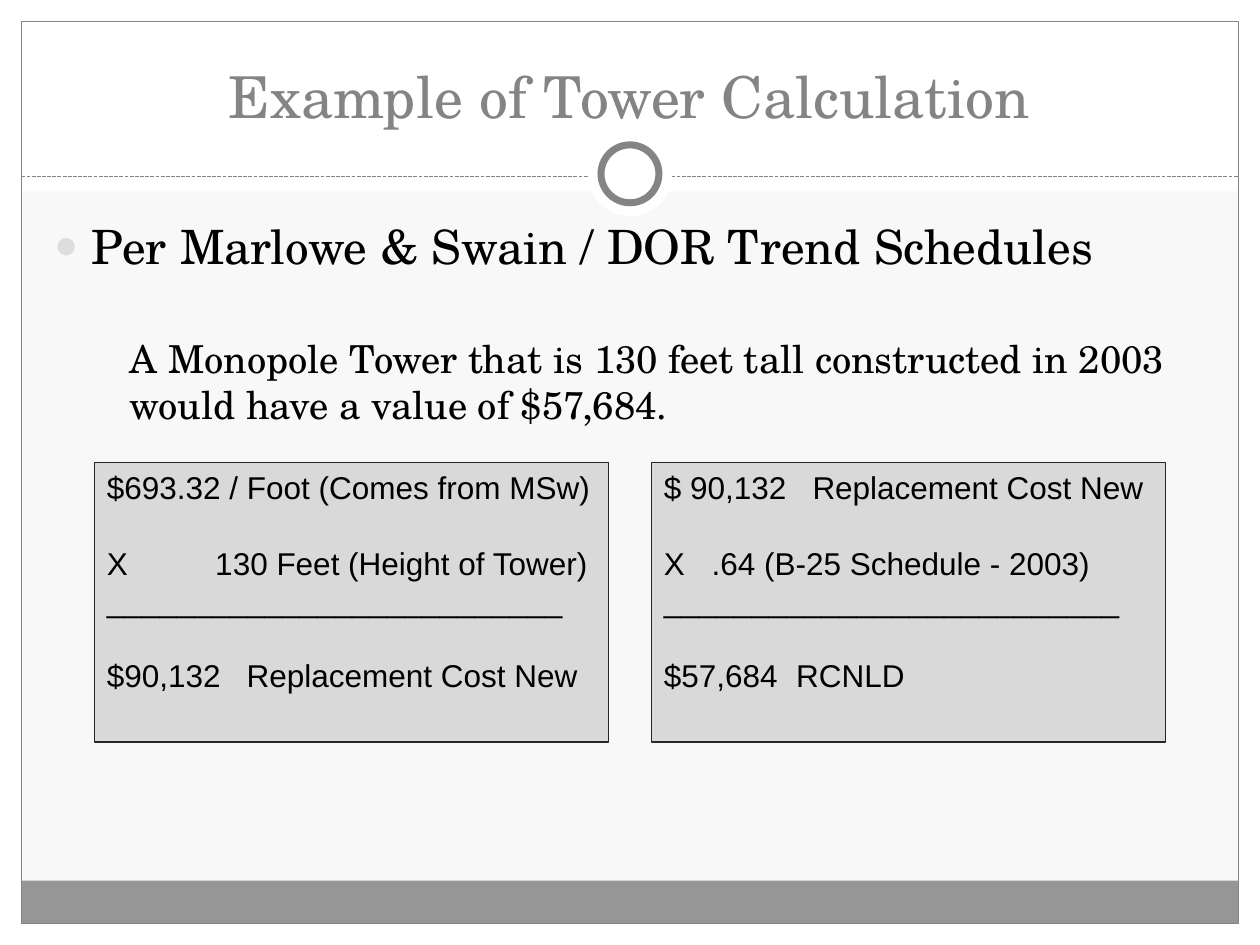
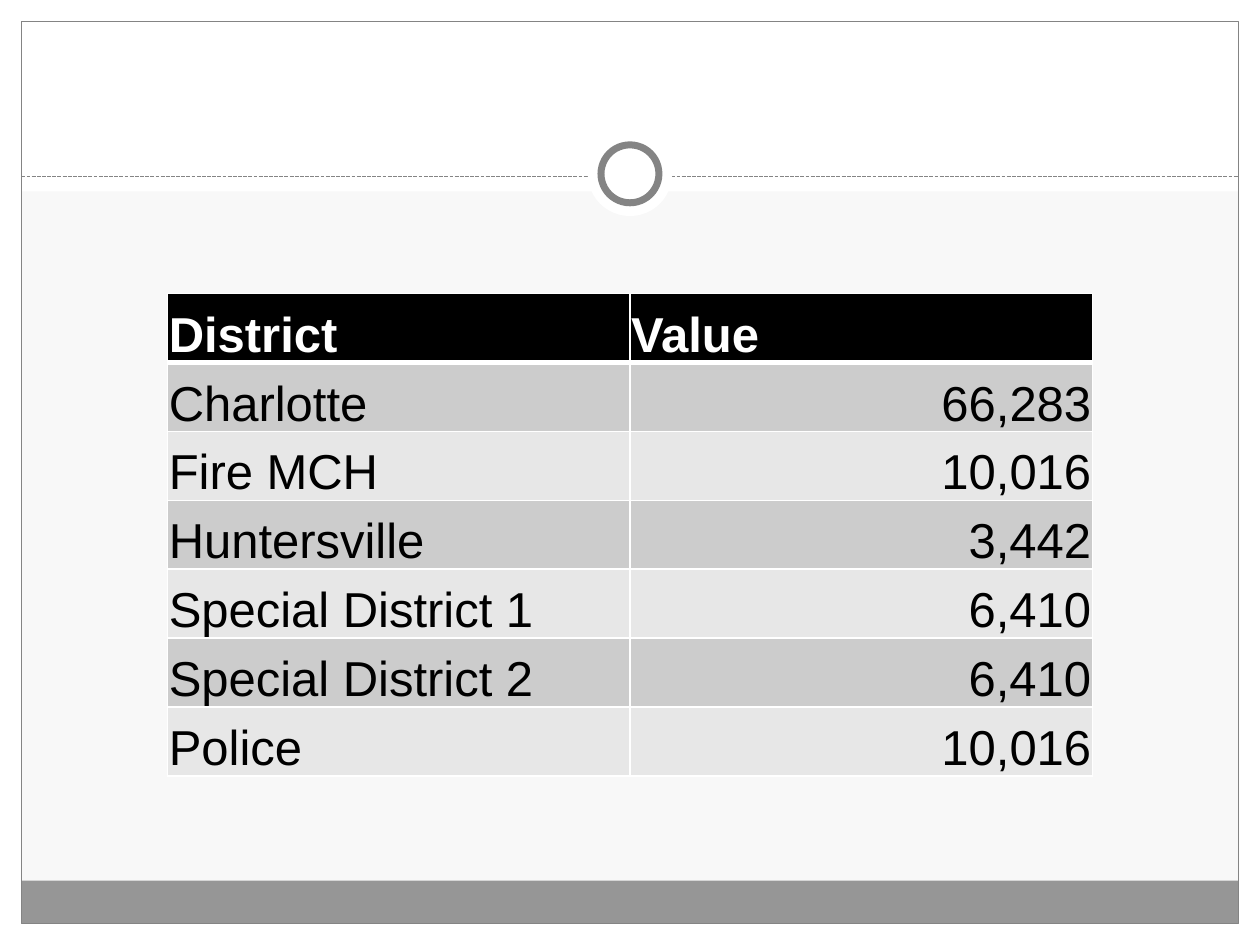
from pptx import Presentation
from pptx.dml.color import RGBColor as RGB
from pptx.enum.dml import MSO_LINE as DASH
from pptx.enum.shapes import MSO_CONNECTOR as CONN, MSO_SHAPE as SHAPE
from pptx.enum.text import MSO_ANCHOR as ANCHOR, MSO_AUTO_SIZE as FIT, PP_ALIGN as ALIGN
from pptx.oxml.ns import qn
from pptx.util import Inches, Pt
from lxml.etree import SubElement

COLORS = dict(paper="F8F8F8", white="FFFFFF", grey="848484", band="969696",
              bullet="DDDDDD", box="D9D9D9", box_line="262626", black="000000",
              row_dark="CCCCCC", row_light="E7E7E7")
SERIF, SANS = "TeX Gyre Schola", "Arial"
W, H, EDGE = 10, 7.5, 0.17

TITLE = dict(name=SERIF, size=Pt(33), color="grey")
HEADLINE = dict(name=SERIF, size=Pt(27), color="black")
DETAIL = dict(HEADLINE, size=Pt(22))
SUM = dict(name=SANS, size=Pt(18), color="black")
CELL = dict(name=SANS, size=Pt(28), bold=False, color="black")
HEAD_CELL = dict(CELL, bold=True, color="white")

# Each line of a sum: text, tab position in inches, space before in points
RULE = ("_" * 26, None, 0)
HEIGHT_SUM = [("$693.32 / Foot (Comes from MSw)", None, 0),
              ("X\t130 Feet (Height of Tower)", 0.86, 21.5),
              RULE,
              ("$90,132\tReplacement Cost New", 1.11, 21.5)]
TREND_SUM = [("$ 90,132\tReplacement Cost New", 1.18, 0),
             ("X\t.64 (B-25 Schedule - 2003)", 0.38, 21.5),
             RULE,
             ("$57,684\tRCNLD", 1.05, 21.5)]
DISTRICTS = [("District", "Value"), ("Charlotte", "66,283"), ("Fire MCH", "10,016"),
             ("Huntersville", "3,442"), ("Special District 1", "6,410"),
             ("Special District 2", "6,410"), ("Police", "10,016")]


def rgb(name):
    return RGB.from_string(COLORS[name])


def inches(*values):
    return [Inches(v) for v in values]


def write(p, text, fmt):
    """Add text to a paragraph, formatted from a dict."""
    r = p.add_run()
    r.text = text
    for key, value in fmt.items():
        if key == "color":
            r.font.color.rgb = rgb(value)
        else:
            setattr(r.font, key, value)


def place(sp, box):
    sp.left, sp.top, sp.width, sp.height = inches(*box)


def add_shape(s, kind, box, fill=None, line=None, width=0.75):
    sp = s.shapes.add_shape(kind, *inches(*box))
    sp.shadow.inherit = False
    if fill:
        sp.fill.solid()
        sp.fill.fore_color.rgb = rgb(fill)
    else:
        sp.fill.background()
    if line:
        sp.line.color.rgb = rgb(line)
        sp.line.width = Pt(width)
    else:
        sp.line.fill.background()
    return sp


def add_frame(master, s):
    """Draw the shared frame on a slide, then move it behind everything on the master."""
    master.background.fill.solid()
    master.background.fill.fore_color.rgb = rgb("paper")
    inner = W - 2 * EDGE
    # White margins and footer band
    parts = [add_shape(s, SHAPE.RECTANGLE, box, "white") for box in (
        (0, H - EDGE, W, EDGE), (0, 0, W, 1.52), (0, 0, EDGE, H), (W - EDGE, 0, EDGE, H))]
    parts.append(add_shape(s, SHAPE.RECTANGLE, (EDGE, 6.99, inner, 0.34), "band"))
    parts.append(add_shape(s, SHAPE.RECTANGLE, (EDGE, EDGE, inner, H - 2 * EDGE), line="grey"))
    # Dashed rule
    rule = s.shapes.add_connector(CONN.STRAIGHT, *inches(EDGE, 1.4, W - EDGE, 1.4))
    rule.line.color.rgb = rgb("grey")
    rule.line.width = Pt(0.75)
    rule.line.dash_style = DASH.SQUARE_DOT
    SubElement(rule._element.spPr, qn("a:effectLst"))
    parts.append(rule)
    # Ring on the rule
    for size, line in ((0.67, None), (0.46, "grey")):
        box = ((W - size) / 2, 1.38 - size / 2, size, size)
        parts.append(add_shape(s, SHAPE.OVAL, box, "white", line, 4))
    tree = master.shapes._spTree
    for i, part in enumerate(parts):
        part._element.xpath(".//p:cNvPr")[0].set("id", str(100 + i))
        tree.insert(2 + i, part._element)


def add_title(s, text, box):
    sp = s.shapes.title
    place(sp, box)
    tf = sp.text_frame
    tf.auto_size, tf.vertical_anchor = FIT.NONE, ANCHOR.BOTTOM
    tf.paragraphs[0].alignment = ALIGN.CENTER
    write(tf.paragraphs[0], text, TITLE)


def set_indent(p, left, hanging):
    pPr = p._p.get_or_add_pPr()
    pPr.set("marL", str(Inches(left)))
    pPr.set("indent", str(-Inches(hanging)))
    return pPr


def add_body(s, headline, detail, box):
    sp = s.placeholders[1]
    place(sp, box)
    tf = sp.text_frame
    tf.auto_size = FIT.NONE
    # Bulleted headline
    p = tf.paragraphs[0]
    p.space_before = Pt(0)
    pPr = set_indent(p, 0.3, 0.3)
    SubElement(SubElement(pPr, qn("a:buClr")), qn("a:srgbClr"), val=COLORS["bullet"])
    SubElement(pPr, qn("a:buSzPct"), val="85000")
    SubElement(pPr, qn("a:buChar"), char="●")
    write(p, headline, HEADLINE)
    # Plain detail
    p = tf.add_paragraph()
    p.level, p.space_before = 1, Pt(35)
    SubElement(set_indent(p, 0.6, 0), qn("a:buNone"))
    write(p, detail, DETAIL)


def add_sum(s, lines, box):
    tf = add_shape(s, SHAPE.RECTANGLE, box, "box", "box_line").text_frame
    tf.word_wrap, tf.vertical_anchor = True, ANCHOR.TOP
    for i, (text, tab, before) in enumerate(lines):
        p = tf.add_paragraph() if i else tf.paragraphs[0]
        p.alignment, p.line_spacing, p.space_before = ALIGN.LEFT, Pt(21.5), Pt(before)
        if tab:
            tabs = SubElement(p._p.get_or_add_pPr(), qn("a:tabLst"))
            SubElement(tabs, qn("a:tab"), pos=str(Inches(tab)), algn="l")
        write(p, text, SUM)


def set_borders(cell, widths):
    tcPr = cell._tc.get_or_add_tcPr()
    for i, (side, width) in enumerate(widths.items()):
        ln = SubElement(tcPr, qn(f"a:ln{side}"), w=str(Pt(width)))
        SubElement(SubElement(ln, qn("a:solidFill")), qn("a:srgbClr"), val=COLORS["white"])
        tcPr.insert(i, ln)


def add_district_table(s, rows, box):
    table = s.shapes.add_table(len(rows), len(rows[0]), *inches(*box)).table
    for i, row in enumerate(rows):
        fill = "black" if i == 0 else "row_dark" if i % 2 else "row_light"
        for j, text in enumerate(row):
            cell = table.cell(i, j)
            cell.fill.solid()
            cell.fill.fore_color.rgb = rgb(fill)
            cell.vertical_anchor = ANCHOR.BOTTOM
            cell.margin_left = cell.margin_right = cell.margin_top = Inches(0.01)
            cell.margin_bottom = 0
            set_borders(cell, dict(L=1, R=1, T=3 if i == 1 else 1, B=1 if i else 3))
            p = cell.text_frame.paragraphs[0]
            p.alignment = ALIGN.RIGHT if i and j else ALIGN.LEFT
            write(p, text, CELL if i else HEAD_CELL)


def tower_slide(s):
    add_title(s, "Example of Tower Calculation", (0.33, 0.25, 9.33, 0.83))
    add_body(s, "Per Marlowe & Swain / DOR Trend Schedules",
             "A Monopole Tower that is 130 feet tall constructed in 2003 "
             "would have a value of $57,684.", (0.33, 1.67, 9.3, 5))
    # Two equal boxes side by side
    width, gap = 4.08, 0.34
    for i, lines in enumerate((HEIGHT_SUM, TREND_SUM)):
        add_sum(s, lines, (0.75 + i * (width + gap), 3.67, width, 2.22))


def district_slide(s):
    add_district_table(s, DISTRICTS, (1.33, 2.33, 7.34, 3.83))


def main():
    prs = Presentation()
    prs.slide_width, prs.slide_height = inches(W, H)
    tower = prs.slides.add_slide(prs.slide_layouts.get_by_name("Title and Content"))
    add_frame(prs.slide_master, tower)
    tower_slide(tower)
    district_slide(prs.slides.add_slide(prs.slide_layouts.get_by_name("Blank")))
    prs.save("out.pptx")


if __name__ == "__main__":
    main()
